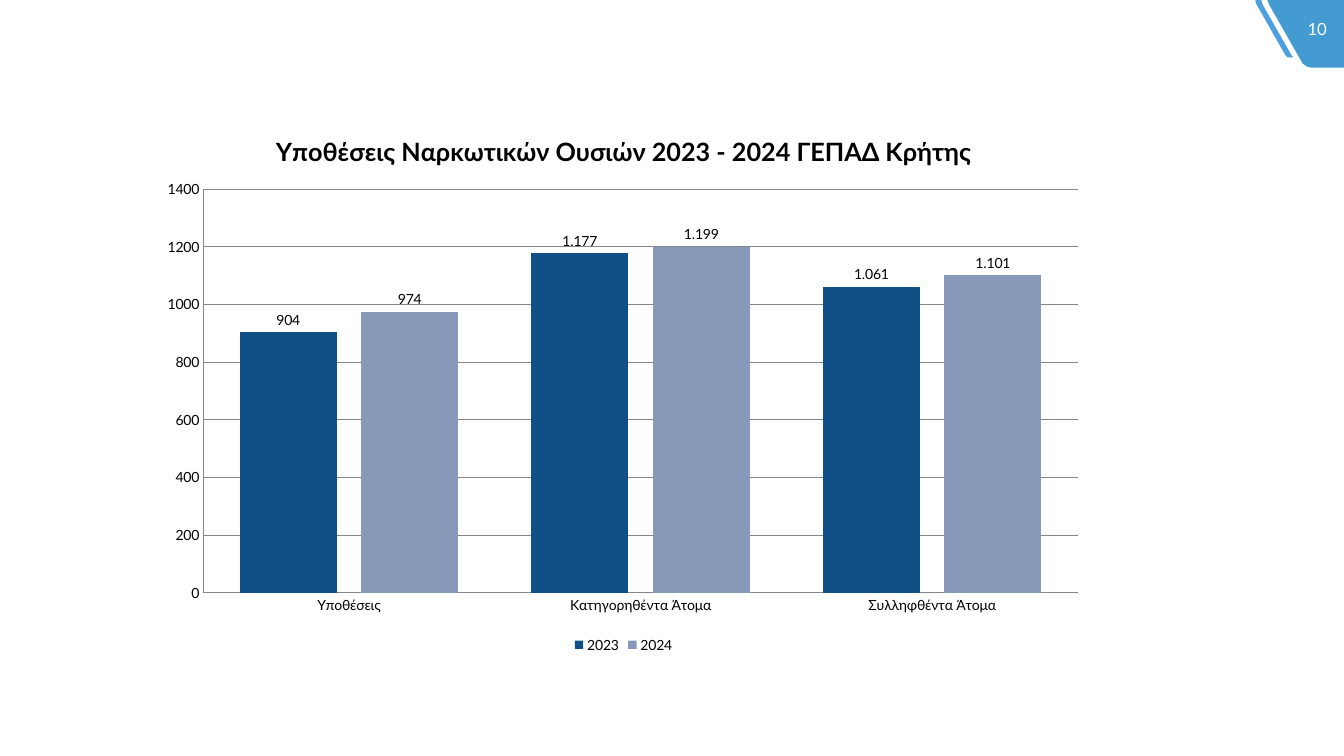
from dataclasses import dataclass

from lxml import etree
from pptx import Presentation, util as u
from pptx.chart import data as chart_data
from pptx.dml.color import RGBColor
from pptx.enum import chart as kinds, text
from pptx.oxml import parse_xml
from pptx.oxml.ns import nsdecls, qn

COLORS = {
    "year_2023": "115087", "year_2024": "8898B8", "line": "868686",
    "text": "000000", "number": "FFFFFF", "tab": "1483C7", "stripe": "4D9FDD",
}
FONT = "Lato"
CATEGORIES = ["Υποθέσεις", "Κατηγορηθέντα Άτομα", "Συλληφθέντα Άτομα"]
TITLE = "Υποθέσεις Ναρκωτικών Ουσιών 2023 - 2024 ΓΕΠΑΔ Κρήτης"


@dataclass
class Year:
    """Yearly counts, one per category."""
    name: str
    counts: tuple[int, ...]
    color: str


@dataclass
class Corner:
    """A filled outline in the top right corner, in inches."""
    points: tuple[tuple[float, float], ...]
    color: str
    opacity: int = 100


YEARS = [
    Year("2023", (904, 1177, 1061), "year_2023"),
    Year("2024", (974, 1199, 1101), "year_2024"),
]
CORNERS = [
    Corner(((12.57, 0), (13.33, 0), (13.33, 0.67), (13, 0.67), (12.96, 0.66),
            (12.92, 0.63), (12.59, 0.05)), "tab", 80),
    Corner(((12.45, 0), (12.51, 0), (12.52, 0.04), (12.81, 0.55), (12.83, 0.57),
            (12.77, 0.57), (12.75, 0.55), (12.46, 0.04)), "stripe"),
]


def rgb(name: str) -> RGBColor:
    """Return a named colour."""
    return RGBColor.from_string(COLORS[name])


def style_font(font, size: float, color: str = "text", bold: bool = False) -> None:
    """Apply the slide font."""
    for key, value in {"name": FONT, "size": u.Pt(size), "bold": bold}.items():
        setattr(font, key, value)
    font.color.rgb = rgb(color)


def draw_corner(page, corner: Corner) -> None:
    """Draw one corner outline."""
    start, *rest = [(u.Inches(x), u.Inches(y)) for x, y in corner.points]
    builder = page.shapes.build_freeform(*start)
    builder.add_line_segments(rest)
    shape = builder.convert_to_shape()
    shape.shadow.inherit = False
    shape.fill.solid()
    shape.fill.fore_color.rgb = rgb(corner.color)
    shape.line.fill.background()
    if corner.opacity < 100:
        fill = shape.fill._xPr.find(qn("a:solidFill"))[0]
        etree.SubElement(fill, qn("a:alpha")).set("val", str(corner.opacity * 1000))


def draw_number(page, number: str) -> None:
    """Write the page number."""
    box = page.shapes.add_textbox(*map(u.Inches, (12.86, 0.14, 0.41, 0.3)))
    frame = box.text_frame
    frame.word_wrap = False
    para = frame.paragraphs[0]
    para.alignment = text.PP_ALIGN.CENTER
    span = para.add_run()
    span.text = number
    style_font(span.font, 12, "number")


def label_series(series, year: Year) -> None:
    """Colour a series and label its columns."""
    series.format.fill.solid()
    series.format.fill.fore_color.rgb = rgb(year.color)
    series.invert_if_negative = False
    above = kinds.XL_LABEL_POSITION.OUTSIDE_END
    for index, count in enumerate(year.counts):
        if count >= 1000:
            label = series.points[index].data_label
            span = label.text_frame.paragraphs[0].add_run()
            span.text = f"{count:,}".replace(",", ".")
            style_font(span.font, 10)
            label.position = above
    labels = series.data_labels
    for key, value in {"show_value": True, "position": above}.items():
        setattr(labels, key, value)
    style_font(labels.font, 10)


def draw_chart(page) -> None:
    """Draw the column chart of cases by year."""
    data = chart_data.CategoryChartData()
    data.categories = CATEGORIES
    for year in YEARS:
        data.add_series(year.name, year.counts)
    chart = page.shapes.add_chart(
        kinds.XL_CHART_TYPE.COLUMN_CLUSTERED,
        *map(u.Inches, (1.48, 1.12, 9.41, 5.4)), data).chart
    style_font(chart.font, 10)

    chart.has_title = True
    span = chart.chart_title.text_frame.paragraphs[0].add_run()
    span.text = TITLE
    style_font(span.font, 18, bold=True)
    chart.chart_title.include_in_layout = False

    chart.has_legend = True
    chart.legend.position = kinds.XL_LEGEND_POSITION.BOTTOM
    chart.legend.include_in_layout = False
    style_font(chart.legend.font, 10)

    scale = {"minimum_scale": 0, "maximum_scale": 1400, "major_unit": 200}
    for key, value in scale.items():
        setattr(chart.value_axis, key, value)
    chart.value_axis.has_major_gridlines = True
    chart.category_axis.has_major_gridlines = False
    for axis in (chart.category_axis, chart.value_axis):
        axis.major_tick_mark = axis.minor_tick_mark = kinds.XL_TICK_MARK.NONE
        style_font(axis.tick_labels.font, 10)
    for part in (chart.category_axis, chart.value_axis, chart.value_axis.major_gridlines):
        part.format.line.color.rgb = rgb("line")
        part.format.line.width = u.Pt(0.75)

    plot = chart.plots[0]
    for key, value in {"gap_width": 75, "overlap": -25, "vary_by_categories": False}.items():
        setattr(plot, key, value)
    for series, year in zip(plot.series, YEARS):
        label_series(series, year)

    area = chart._chartSpace.chart.plotArea
    for old in area.findall(qn("c:layout")):
        area.remove(old)
    spot = "".join(f'<c:{key} val="{value}"/>' for key, value in {
        "layoutTarget": "inner", "xMode": "edge", "yMode": "edge",
        "x": 0.057, "y": 0.14, "w": 0.922, "h": 0.742}.items())
    area.insert(0, parse_xml(
        f'<c:layout {nsdecls("c")}><c:manualLayout>{spot}</c:manualLayout></c:layout>'))


def main() -> None:
    """Build and save the deck."""
    deck = Presentation()
    deck.slide_width, deck.slide_height = u.Inches(13.33), u.Inches(7.5)
    page = deck.slides.add_slide(deck.slide_layouts[6])
    for corner in CORNERS:
        draw_corner(page, corner)
    draw_number(page, "10")
    draw_chart(page)
    deck.save("out.pptx")


if __name__ == "__main__":
    main()
